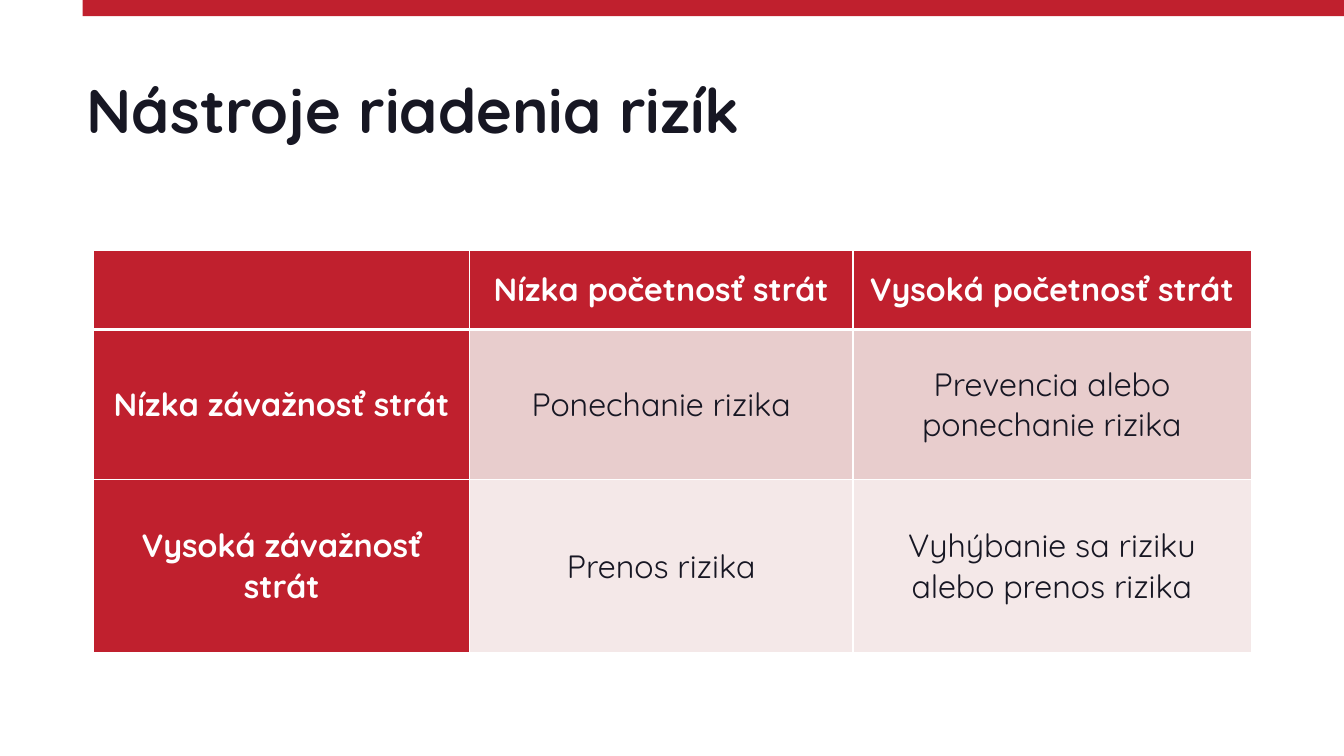
"""Build the slide on risk management tools: a title above a severity and frequency matrix."""
from lxml.etree import SubElement
from pptx import Presentation
from pptx.dml.color import RGBColor
from pptx.enum.shapes import MSO_SHAPE as Shape
from pptx.enum.text import MSO_ANCHOR as Anchor, MSO_AUTO_SIZE as AutoSize, PP_ALIGN as Align
from pptx.oxml import parse_xml
from pptx.oxml.ns import nsdecls, qn
from pptx.util import Inches, Pt

COLORS = {"red": "C0202E", "ink": "171723", "white": "FFFFFF", "rose": "E8CDCD", "blush": "F4E8E8"}
FONT = "Quicksand"
COLUMNS = [3.73, 3.8, 3.95]
ROWS = [0.79, 1.49, 1.71]
ROW_FILLS = ["red", "rose", "blush"]
MATRIX = [
    ["", "Nízka početnosť strát", "Vysoká početnosť strát"],
    ["Nízka závažnosť strát", "Ponechanie rizika", "Prevencia alebo ponechanie rizika"],
    ["Vysoká závažnosť strát", "Prenos rizika", "Vyhýbanie sa riziku alebo prenos rizika"],
]


def write(para, text, size, color, bold):
    """Add one formatted run to a paragraph."""
    span = para.add_run()
    span.text = text
    span.font.name = FONT
    span.font.size = Pt(size)
    span.font.bold = bold
    span.font.color.rgb = RGBColor.from_string(COLORS[color])


def add_borders(cell, widths):
    """Draw white borders of the given point widths around a cell."""
    properties = cell._tc.get_or_add_tcPr()
    for index, (side, width) in enumerate(widths.items()):
        line = parse_xml(f'<a:ln{side} {nsdecls("a")} w="{Pt(width)}"/>')
        fill = SubElement(line, qn("a:solidFill"))
        SubElement(fill, qn("a:srgbClr"), val=COLORS["white"])
        properties.insert(index, line)


deck = Presentation()
deck.slide_width, deck.slide_height = Inches(13.33), Inches(7.5)
page = deck.slides.add_slide(deck.slide_layouts[5])

band = page.shapes.add_shape(Shape.RECTANGLE, Inches(0.82), 0, Inches(12.51), Inches(0.16))
band.shadow.inherit = False
band.fill.solid()
band.fill.fore_color.rgb = RGBColor.from_string(COLORS["red"])
band.line.fill.background()

title = page.shapes.title
title.left, title.top = Inches(0.76), Inches(0.4)
title.width, title.height = Inches(11.5), Inches(1.45)
frame = title.text_frame
frame.auto_size = AutoSize.NONE
frame.word_wrap = True
frame.vertical_anchor = Anchor.MIDDLE
heading = frame.paragraphs[0]
heading.alignment = Align.LEFT
heading.line_spacing = 0.9
write(heading, "Nástroje riadenia rizík", 44, "ink", True)

table = page.shapes.add_table(
    len(ROWS), len(COLUMNS), Inches(0.93), Inches(2.48), Inches(sum(COLUMNS)), Inches(sum(ROWS))
).table
table.first_col = True
for column, width in zip(table.columns, COLUMNS):
    column.width = Inches(width)
for row, height in zip(table.rows, ROWS):
    row.height = Inches(height)

for r, texts in enumerate(MATRIX):
    for c, text in enumerate(texts):
        cell = table.cell(r, c)
        is_label = r == 0 or c == 0
        cell.vertical_anchor = Anchor.MIDDLE
        cell.fill.solid()
        cell.fill.fore_color.rgb = RGBColor.from_string(COLORS["red" if is_label else ROW_FILLS[r]])
        add_borders(cell, {"L": 1, "R": 1, "T": 3 if r == 1 else 1, "B": 3 if r == 0 else 1})
        para = cell.text_frame.paragraphs[0]
        para.alignment = Align.CENTER
        if text:
            write(para, text, 23, "white" if is_label else "ink", is_label)

deck.save("out.pptx")
